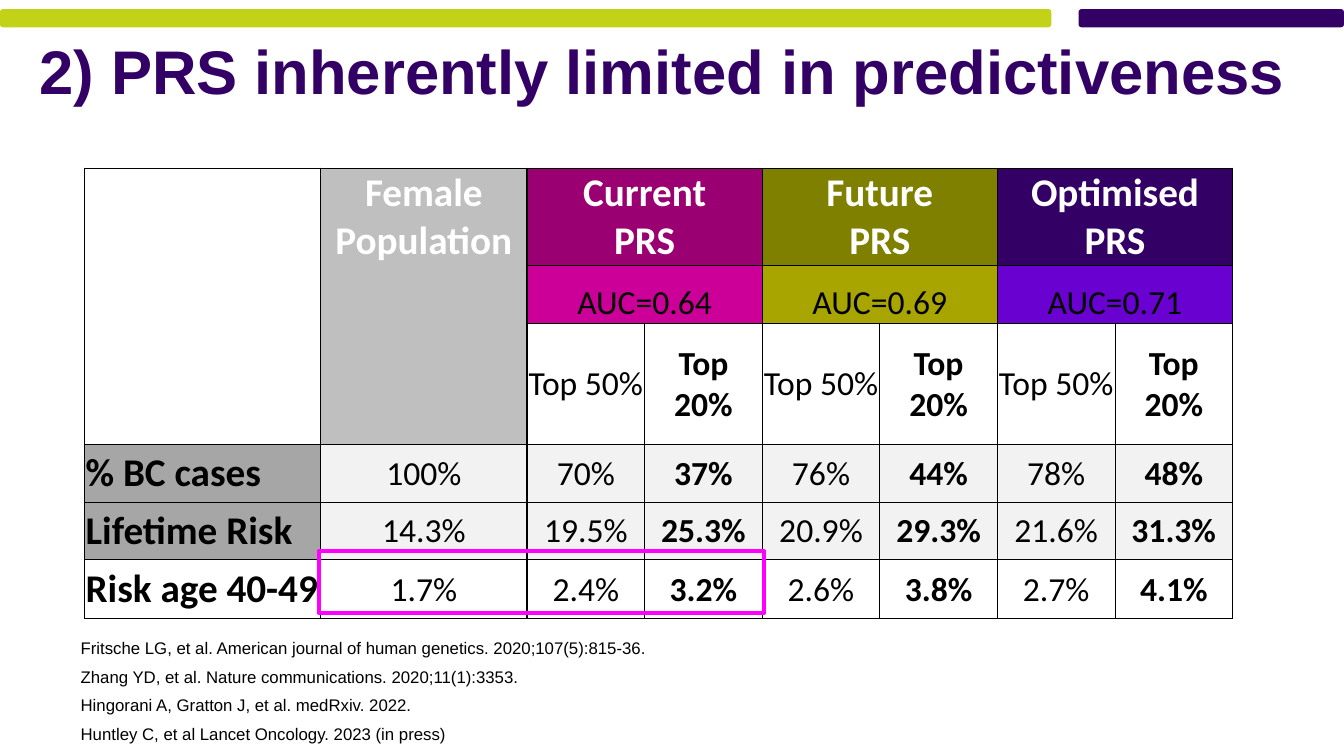
from lxml import etree
from pptx import Presentation, util as u
from pptx.dml.color import RGBColor
from pptx.enum import shapes, text
from pptx.oxml import ns

Pt = u.Pt
ALIGN = text.PP_ALIGN
ANCHOR = text.MSO_ANCHOR
PURPLE, LIME, MAGENTA = "330165", "C2D216", "FF00FF"
BLACK, WHITE, PALE, SILVER, GREY = "000000", "FFFFFF", "F2F2F2", "BFBFBF", "A6A6A6"
COLUMNS = [168.5, 147.5] + [84] * 6
ROWS = [69.3, 41.6, 86.4, 41, 41.4, 42]
SCORES = [
    (["Current", "PRS"], "9A0072", "AUC=0.64", "CC0099"),
    (["Future", "PRS"], "808000", "AUC=0.69", "A8A400"),
    (["Optimised PRS"], PURPLE, "AUC=0.71", "6902D0"),
]
RISKS = [
    ("% BC cases", GREY, PALE, "100% 70% 37% 76% 44% 78% 48%"),
    ("Lifetime Risk", GREY, PALE, "14.3% 19.5% 25.3% 20.9% 29.3% 21.6% 31.3%"),
    ("Risk age 40-49", None, None, "1.7% 2.4% 3.2% 2.6% 3.8% 2.7% 4.1%"),
]
REFERENCES = [
    "Fritsche LG, et al. American journal of human genetics. 2020;107(5):815-36.",
    "Zhang YD, et al. Nature communications. 2020;11(1):3353.",
    "Hingorani A, Gratton J, et al. medRxiv. 2022.",
    "Huntley C, et al Lancet Oncology. 2023 (in press)",
]


def paint(color, value):
    color.rgb = RGBColor.from_string(value)


class RiskSlide:
    """Hold the slide and its style, and draw each kind of element."""

    def __init__(self, presentation):
        self.slide = presentation.slides.add_slide(presentation.slide_layouts[1])
        self.heading_font, self.table_font = "Arial", "Calibri"

    def add_lines(self, frame, lines, font, size, color=BLACK, bold=False, align=ALIGN.LEFT):
        for index, line in enumerate(lines):
            paragraph = frame.add_paragraph() if index else frame.paragraphs[0]
            paragraph.alignment = align
            run = paragraph.add_run()
            run.text = line
            run.font.name, run.font.size, run.font.bold = font, Pt(size), bold
            paint(run.font.color, color)

    def place(self, shape, left, top, width, height):
        shape.left, shape.top = Pt(left), Pt(top)
        shape.width, shape.height = Pt(width), Pt(height)
        shape.text_frame.word_wrap = True
        shape.text_frame.auto_size = text.MSO_AUTO_SIZE.NONE

    def title(self, line):
        shape = self.slide.shapes.title
        self.place(shape, 20.9, 23, 918, 60.5)
        shape.text_frame.vertical_anchor = ANCHOR.MIDDLE
        self.add_lines(shape.text_frame, [line], self.heading_font, 44, PURPLE, True)
        shape.text_frame.paragraphs[0].line_spacing = 0.9

    def references(self, lines):
        shape = self.slide.placeholders[1]
        self.place(shape, 41.8, 452, 458.6, 87)
        self.add_lines(shape.text_frame, lines, self.heading_font, 12, align=ALIGN.JUSTIFY)
        for paragraph in shape.text_frame.paragraphs:
            paragraph.space_before = paragraph.space_after = Pt(3)
            properties = paragraph._p.get_or_add_pPr()
            properties.set("marL", str(Pt(8.6)))
            properties.set("indent", "0")
            etree.SubElement(properties, ns.qn("a:buNone"))

    def box(self, kind, left, top, width, height, fill=None, line=None):
        shape = self.slide.shapes.add_shape(kind, Pt(left), Pt(top), Pt(width), Pt(height))
        shape.shadow.inherit = False
        if fill:
            shape.fill.solid()
            paint(shape.fill.fore_color, fill)
        else:
            shape.fill.background()
        if line:
            paint(shape.line.color, line)
            shape.line.width = Pt(3)
        else:
            shape.line.fill.background()

    def table(self, left, top):
        frame = self.slide.shapes.add_table(
            len(ROWS), len(COLUMNS), Pt(left), Pt(top), Pt(sum(COLUMNS)), Pt(sum(ROWS)))
        table = frame.table
        table.first_row = table.horz_banding = False
        for column, width in zip(table.columns, COLUMNS):
            column.width = Pt(width)
        for row, height in zip(table.rows, ROWS):
            row.height = Pt(height)
        for column in (0, 1):
            table.cell(0, column).merge(table.cell(2, column))
        for row in (0, 1):
            for column in (2, 4, 6):
                table.cell(row, column).merge(table.cell(row, column + 1))
        for row in range(len(ROWS)):
            for column in range(len(COLUMNS)):
                self.borders(table.cell(row, column), row, column)
        return table

    def borders(self, cell, row, column):
        thin_columns, thin_rows = (0, 2, 4, 6), (0, 3, 4)
        edges = {
            "lnL": column - 1 in thin_columns,
            "lnR": column + cell.span_width - 1 in thin_columns,
            "lnT": row - 1 in thin_rows,
            "lnB": row + cell.span_height - 1 in thin_rows,
        }
        properties = cell._tc.get_or_add_tcPr()
        for tag, thin in edges.items():
            line = etree.SubElement(properties, ns.qn("a:" + tag), w=str(Pt(0.5 if thin else 1)))
            fill = etree.SubElement(line, ns.qn("a:solidFill"))
            etree.SubElement(fill, ns.qn("a:srgbClr"), val=BLACK)
        cell.fill.background()

    def cell(self, cell, lines, size=24, color=BLACK, bold=False, fill=None,
             anchor=ANCHOR.MIDDLE, align=ALIGN.CENTER):
        cell.margin_left = cell.margin_right = cell.margin_top = Pt(0.7)
        cell.margin_bottom = 0
        cell.vertical_anchor = anchor
        if fill:
            cell.fill.solid()
            paint(cell.fill.fore_color, fill)
        self.add_lines(cell.text_frame, lines, self.table_font, size, color, bold, align)


def main():
    presentation = Presentation()
    presentation.slide_width, presentation.slide_height = Pt(960), Pt(540)
    page = RiskSlide(presentation)
    rounded = shapes.MSO_SHAPE.ROUNDED_RECTANGLE
    page.box(rounded, 0, 6.5, 751, 13, fill=LIME)
    page.box(rounded, 770.4, 6.5, 189.6, 13, fill=PURPLE)
    page.title("2) PRS inherently limited in predictiveness")

    table = page.table(60.5, 120.2)
    page.cell(table.cell(0, 1), ["Female Population"], 28, WHITE, True, SILVER, ANCHOR.TOP)
    for index, (name, dark, accuracy, light) in enumerate(SCORES):
        column = 2 + 2 * index
        page.cell(table.cell(0, column), name, 28, WHITE, True, dark, ANCHOR.BOTTOM)
        page.cell(table.cell(1, column), [accuracy], fill=light, anchor=ANCHOR.BOTTOM)
        page.cell(table.cell(2, column), ["Top 50%"])
        page.cell(table.cell(2, column + 1), ["Top 20%"], bold=True)
    for row, (label, label_fill, fill, values) in enumerate(RISKS, 3):
        page.cell(table.cell(row, 0), [label], 28, bold=True, fill=label_fill, align=ALIGN.LEFT)
        for column, value in enumerate(values.split(), 1):
            page.cell(table.cell(row, column), [value], bold=column in (3, 5, 7), fill=fill)

    page.references(REFERENCES)
    page.box(shapes.MSO_SHAPE.RECTANGLE, 227.6, 393.8, 318.2, 43.9, line=MAGENTA)
    presentation.save("out.pptx")


if __name__ == "__main__":
    main()
